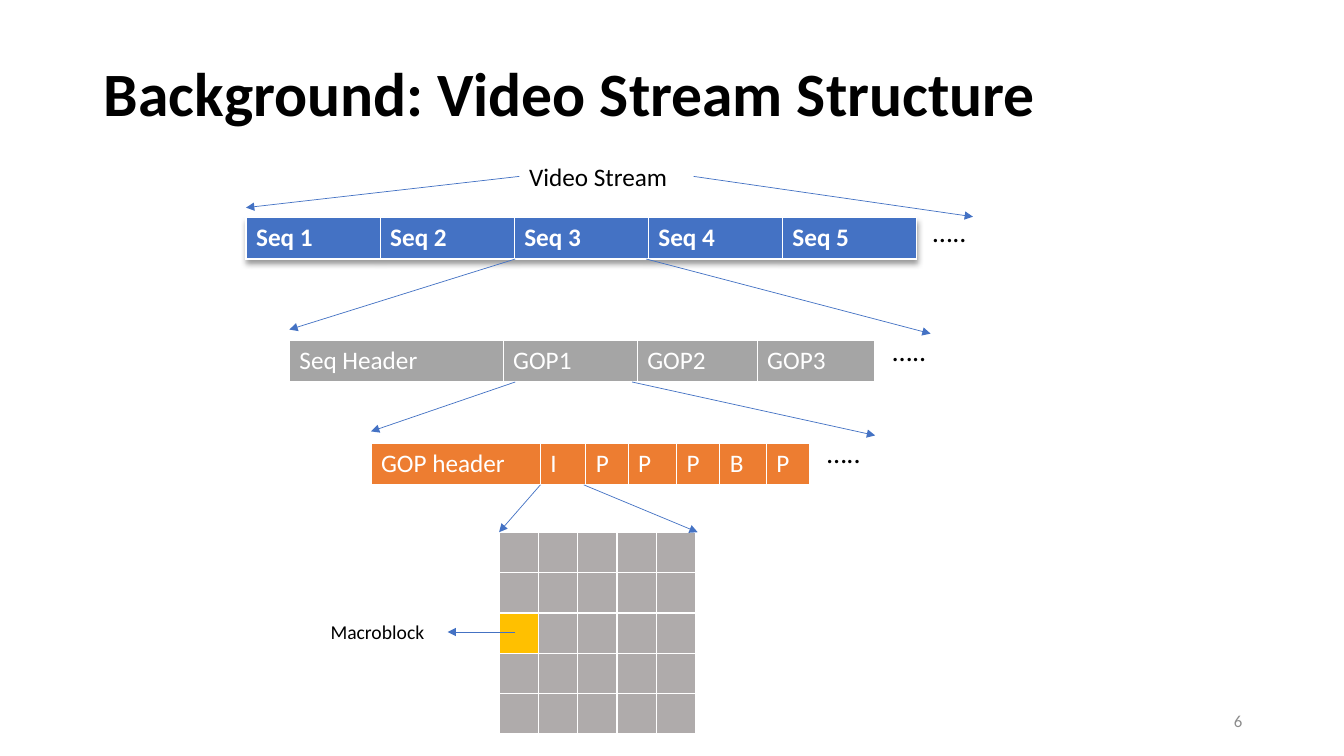
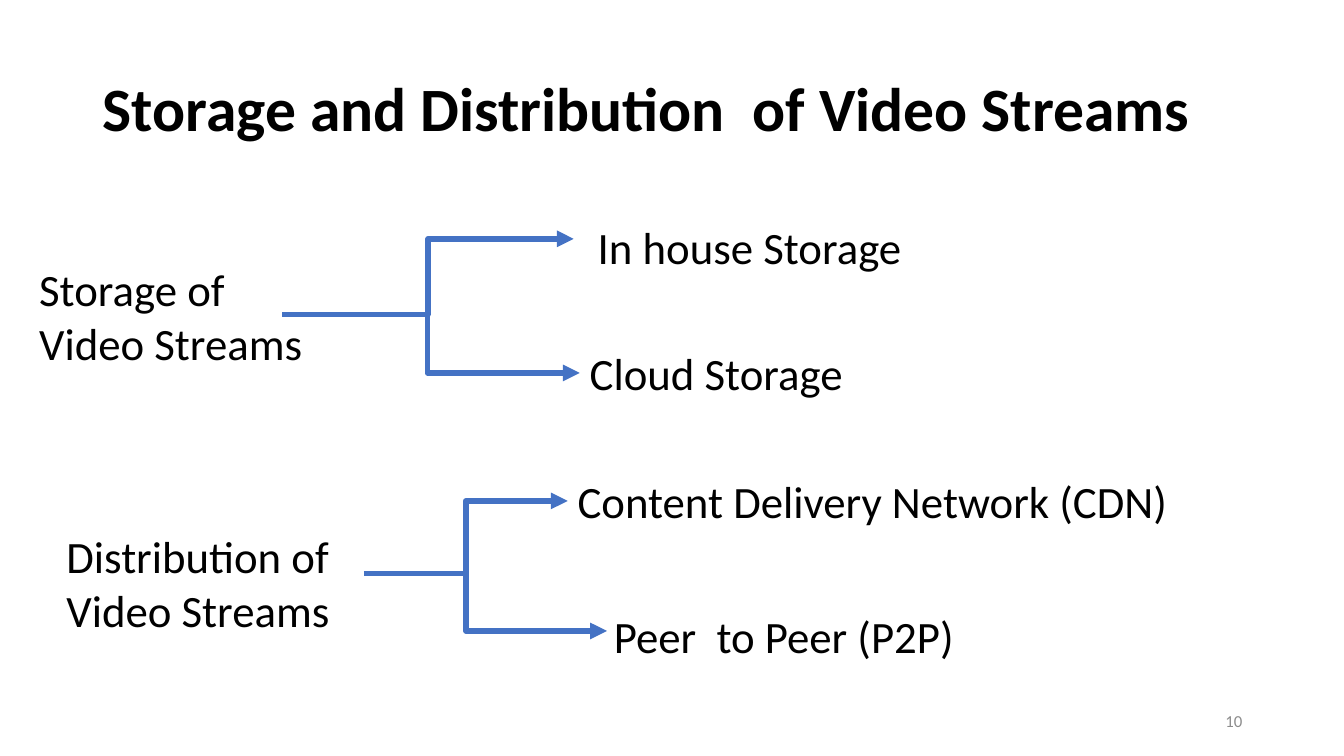
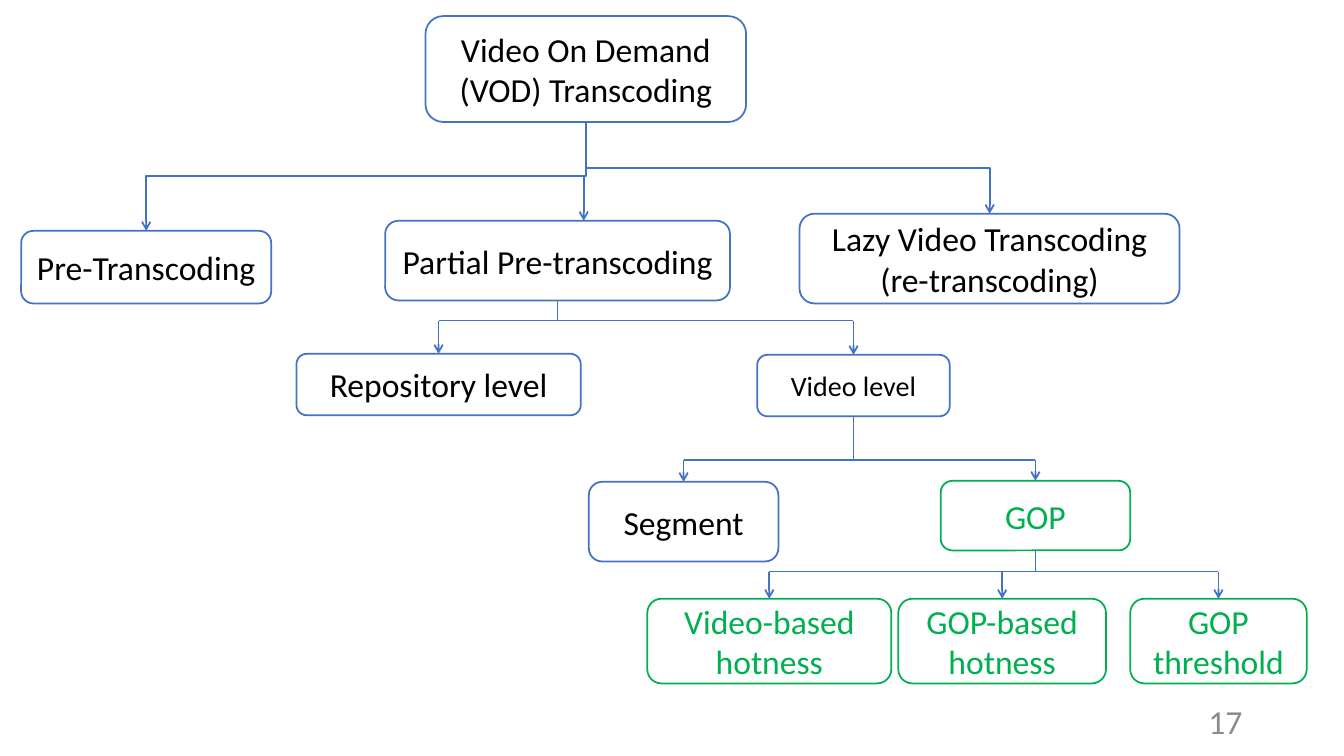
"""Build three slides on video stream structure, storage and transcoding."""
from lxml.etree import SubElement
from pptx import Presentation
from pptx.dml.color import RGBColor
from pptx.enum.shapes import MSO_CONNECTOR, MSO_SHAPE
from pptx.enum.text import MSO_ANCHOR, MSO_AUTO_SIZE, PP_ALIGN
from pptx.oxml import parse_xml
from pptx.oxml.ns import nsdecls, qn
from pptx.util import Inches, Pt

FONT = "Calibri"
BLACK = RGBColor(0x00, 0x00, 0x00)
WHITE = RGBColor(0xFF, 0xFF, 0xFF)
BLUE = RGBColor(0x44, 0x72, 0xC4)
GREY = RGBColor(0xA5, 0xA5, 0xA5)
ORANGE = RGBColor(0xED, 0x7D, 0x31)
BLOCK_GREY = RGBColor(0xAF, 0xAB, 0xAB)
AMBER = RGBColor(0xFF, 0xC0, 0x00)
GREEN = RGBColor(0x00, 0xB0, 0x50)
NUMBER_GREY = RGBColor(0x8C, 0x8C, 0x8C)

STRIPS = [
    (2.44, 2.16, BLUE, True,
     [(f"Seq {n}", 1.33) for n in range(1, 6)]),
    (2.87, 3.38, GREY, False,
     [("Seq Header", 2.12), ("GOP1", 1.33), ("GOP2", 1.19), ("GOP3", 1.17)]),
    (3.68, 4.4, ORANGE, False,
     [("GOP header", 1.68), ("I", 0.45), ("P", 0.42), ("P", 0.48),
      ("P", 0.43), ("B", 0.46), ("P", 0.43)]),
]
ZOOM_ARROWS = [
    ((5.15, 1.75), (2.44, 2.06)), ((6.88, 1.75), (9.65, 2.15)),
    ((5.11, 2.57), (2.87, 3.27)), ((6.41, 2.57), (9.23, 3.31)),
    ((5.11, 3.79), (3.68, 4.28)), ((6.27, 3.79), (8.68, 4.32)),
    ((5.36, 4.81), (4.95, 5.28)), ((5.79, 4.81), (6.92, 5.28)),
    ((5.11, 6.27), (4.44, 6.27)),
]
ELLIPSES = [(9.1, 2.08), (8.7, 3.26), (8.05, 4.27)]
GRID_AT, GRID_SIZE, GRID_COL, GRID_ROW = (4.95, 5.28), 5, 0.39, 0.4
MACROBLOCK = (2, 0)

STORAGE_LABELS = [
    ("Storage of\nVideo Streams", (0.29, 2.55, 2.84, 1.18)),
    ("In house Storage", (5.83, 2.13, 3.25, 0.64)),
    ("Cloud Storage", (5.75, 3.38, 2.74, 0.64)),
    ("Distribution of\nVideo Streams", (0.56, 5.2, 3.08, 1.18)),
    ("Content Delivery Network (CDN)", (5.63, 4.65, 6.07, 0.64)),
    ("Peer  to Peer (P2P)", (5.99, 5.99, 3.6, 0.64)),
]
STORAGE_ELBOWS = [
    ((2.8, 3.12), (5.69, 2.37), 0.5),
    ((4.24, 3.12), (5.75, 3.7), 0),
    ((3.61, 5.69), (5.63, 4.97), 0.5),
    ((4.65, 5.03), (6.02, 6.26), -0.02),
]

TREE_BOXES = {
    "vod": ("Video On Demand\n(VOD) Transcoding", (4.22, 0.16, 3.18, 1.05), BLUE),
    "pre": ("Pre-Transcoding", (0.21, 2.29, 2.48, 0.72), BLUE),
    "lazy": ("Lazy Video Transcoding\n(re-transcoding)", (7.93, 2.12, 3.77, 0.89), BLUE),
    "partial": ("Partial Pre-transcoding", (3.82, 2.19, 3.42, 0.79), BLUE),
    "repository": ("Repository level", (2.94, 3.51, 2.82, 0.61), BLUE),
    "video": ("Video level", (7.51, 3.52, 1.91, 0.61), BLUE),
    "segment": ("Segment", (5.84, 4.78, 1.88, 0.79), BLUE),
    "gop": ("GOP", (9.33, 4.77, 1.88, 0.69), GREEN),
    "video_hot": ("Video-based\nhotness", (6.42, 5.94, 2.42, 0.84), GREEN),
    "gop_hot": ("GOP-based\nhotness", (8.91, 5.94, 2.06, 0.84), GREEN),
    "threshold": ("GOP\nthreshold", (11.21, 5.94, 1.75, 0.84), GREEN),
}
BRANCHES = [
    ("partial", 3.18, ["repository", "video"]),
    ("video", 4.56, ["segment", "gop"]),
    ("gop", 5.67, ["video_hot", "gop_hot", "threshold"]),
]


def inches(values):
    return [Inches(v) for v in values]


def write(tf, text, size, color=BLACK, bold=False, align=PP_ALIGN.LEFT):
    tf.text = text
    for p in tf.paragraphs:
        p.alignment = align
        for r in p.runs:
            r.font.name, r.font.size, r.font.bold = FONT, Pt(size), bold
            r.font.color.rgb = color


def label(slide, text, box, size, align=PP_ALIGN.LEFT):
    tf = slide.shapes.add_textbox(*inches(box)).text_frame
    tf.word_wrap = False
    tf.auto_size = MSO_AUTO_SIZE.SHAPE_TO_FIT_TEXT
    write(tf, text, size, align=align)


def new_slide(prs, number, number_size=12, title=None, title_at=None):
    slide = prs.slides.add_slide(prs.slide_layouts[5 if title else 6])
    if title:
        sp = slide.shapes.title
        sp.left, sp.top, sp.width, sp.height = inches((*title_at, 11.5, 1.45))
        tf = sp.text_frame
        tf.vertical_anchor = MSO_ANCHOR.MIDDLE
        write(tf, title, 44, bold=True)
        tf.paragraphs[0].line_spacing = 0.9
    tf = slide.shapes.add_textbox(*inches((9.42, 6.95, 3, 0.4))).text_frame
    tf.word_wrap = True
    tf.vertical_anchor = MSO_ANCHOR.MIDDLE
    write(tf, str(number), number_size, NUMBER_GREY, align=PP_ALIGN.RIGHT)
    return slide


def line(slide, start, end, width, head=None, kind=MSO_CONNECTOR.STRAIGHT):
    cx = slide.shapes.add_connector(kind, *inches((*start, *end)))
    cx.line.color.rgb = BLUE
    cx.line.width = Pt(width)
    if head:
        SubElement(cx.line._get_or_add_ln(), qn("a:tailEnd"), type=head)
    SubElement(cx._element.spPr, qn("a:effectLst"))
    return cx


def elbow_across(slide, start, end, bend):
    cx = line(slide, start, end, 4, "triangle", MSO_CONNECTOR.ELBOW)
    geom = cx._element.spPr.find(qn("a:prstGeom"))
    guides = geom.find(qn("a:avLst"))
    if guides is None:
        guides = SubElement(geom, qn("a:avLst"))
    SubElement(guides, qn("a:gd"), name="adj1", fmla=f"val {round(bend * 100000)}")


def elbow_down(slide, start, end):
    (x1, y1), (x2, y2) = start, end
    mid_x, mid_y = (x1 + x2) / 2, (y1 + y2) / 2
    half_w, half_h = (y2 - y1) / 2, abs(x2 - x1) / 2
    cx = line(slide, (mid_x - half_w, mid_y - half_h),
              (mid_x + half_w, mid_y + half_h), 1.25, "arrow", MSO_CONNECTOR.ELBOW)
    xfrm = cx._element.spPr.find(qn("a:xfrm"))
    rightward = x2 > x1
    xfrm.set("rot", str((270 if rightward else 90) * 60000))
    if rightward:
        xfrm.set("flipH", "1")


def add_grid(slide, at, widths, heights):
    size = (sum(widths), sum(heights))
    table = slide.shapes.add_table(len(heights), len(widths), *inches((*at, *size))).table
    for col, width in zip(table.columns, widths):
        col.width = Inches(width)
    for row, height in zip(table.rows, heights):
        row.height = Inches(height)
    return table


def paint(cell, color):
    cell.fill.solid()
    cell.fill.fore_color.rgb = color


def add_table_shadow(table):
    table._tbl.tblPr.insert(0, parse_xml(
        f'<a:effectLst {nsdecls("a")}><a:outerShdw blurRad="50800" dist="38100" '
        'dir="5400000" algn="t" rotWithShape="0"><a:srgbClr val="000000">'
        '<a:alpha val="40000"/></a:srgbClr></a:outerShdw></a:effectLst>'))


def structure_slide(prs):
    slide = new_slide(prs, 6, title="Background: Video Stream Structure",
                      title_at=(0.93, 0.23))
    for left, top, color, is_stream, cells in STRIPS:
        table = add_grid(slide, (left, top), [w for _, w in cells], [0.41])
        for cell, (text, _) in zip(table.rows[0].cells, cells):
            paint(cell, color)
            write(cell.text_frame, text, 18, WHITE, bold=is_stream)
        if is_stream:
            add_table_shadow(table)
    blocks = add_grid(slide, GRID_AT, [GRID_COL] * GRID_SIZE, [GRID_ROW] * GRID_SIZE)
    for cell in blocks.iter_cells():
        paint(cell, BLOCK_GREY)
    paint(blocks.cell(*MACROBLOCK), AMBER)
    for start, end in ZOOM_ARROWS:
        line(slide, start, end, 0.5, "triangle")
    for at in ELLIPSES:
        label(slide, "…..", (*at, 0.64, 0.44), 20, PP_ALIGN.CENTER)
    label(slide, "Video Stream", (5.15, 1.55, 1.73, 0.4), 18)
    label(slide, "Macroblock", (3.18, 6.1, 1.2, 0.34), 14)


def storage_slide(prs):
    slide = new_slide(prs, 10, title="Storage and Distribution  of Video Streams",
                      title_at=(0.92, 0.38))
    for text, box in STORAGE_LABELS:
        label(slide, text, box, 32)
    for start, end, bend in STORAGE_ELBOWS:
        elbow_across(slide, start, end, bend)


def top(name):
    x, y, w, _ = TREE_BOXES[name][1]
    return x + w / 2, y


def bottom(name):
    x, y = top(name)
    return x, y + TREE_BOXES[name][1][3]


def transcoding_slide(prs):
    slide = new_slide(prs, 17, number_size=24)
    for name, (text, box, color) in TREE_BOXES.items():
        sp = slide.shapes.add_shape(MSO_SHAPE.ROUNDED_RECTANGLE, *inches(box))
        sp.shadow.inherit = False
        sp.fill.solid()
        sp.fill.fore_color.rgb = WHITE
        sp.line.color.rgb = color
        sp.line.width = Pt(1.25)
        tf = sp.text_frame
        tf.word_wrap = True
        tf.vertical_anchor = MSO_ANCHOR.MIDDLE
        write(tf, text, 20 if name == "video" else 24,
              GREEN if color == GREEN else BLACK, align=PP_ALIGN.CENTER)
    for child in ("lazy", "pre"):
        elbow_down(slide, bottom("vod"), top(child))
    line(slide, (5.79, 1.76), (5.79, 2.19), 1.25, "arrow")
    for parent, bus, children in BRANCHES:
        x, y = bottom(parent)
        line(slide, (x, y), (x, bus), 1.25)
        tops = [top(child) for child in children]
        line(slide, (tops[0][0], bus), (tops[-1][0], bus), 1.25)
        for child_x, child_y in tops:
            line(slide, (child_x, bus), (child_x, child_y), 1.25, "arrow")


def main():
    prs = Presentation()
    prs.slide_width, prs.slide_height = inches((13.33, 7.5))
    structure_slide(prs)
    storage_slide(prs)
    transcoding_slide(prs)
    prs.save("out.pptx")


if __name__ == "__main__":
    main()
